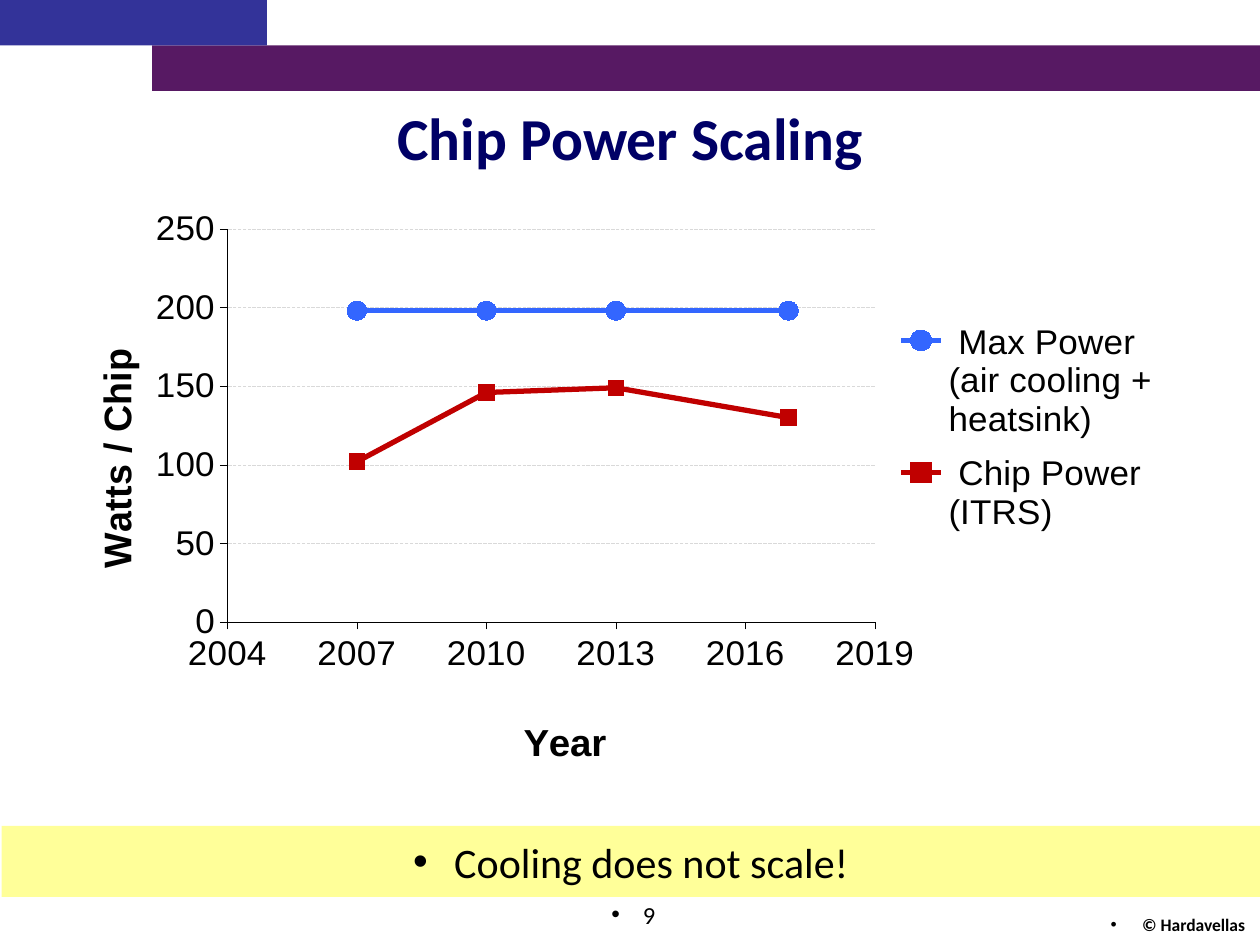
from lxml.etree import SubElement
from pptx import Presentation
from pptx.chart.data import XyChartData
from pptx.dml.color import RGBColor
from pptx.enum.chart import XL_CHART_TYPE as ChartType
from pptx.enum.chart import XL_LEGEND_POSITION as LegendPosition
from pptx.enum.chart import XL_MARKER_STYLE as Marker
from pptx.enum.chart import XL_TICK_MARK as TickMark
from pptx.enum.dml import MSO_LINE as Dash
from pptx.enum.shapes import MSO_SHAPE as Shape
from pptx.enum.text import MSO_ANCHOR as Anchor
from pptx.enum.text import PP_ALIGN as Align
from pptx.oxml.ns import qn
from pptx.util import Pt

TITLE = "Chip Power Scaling"
TAKEAWAY = " Cooling does not scale!"
BARS = [((87, 26, 633, 26), "571963"), ((0, 0, 152.5, 26), "333399")]
# text, box, size, bold
FOOTERS = [
    ("© Hardavellas", (480, 519, 238.5, 18), 10, True),
    ("9", (214, 510.5, 167.5, 37.5), 14, False),
]
YEARS = [2007, 2010, 2013, 2017]
# name, watts, colour, marker, marker size
SERIES = [
    (" Max Power (air cooling + heatsink)", [198, 198, 198, 198], "3366FF", Marker.CIRCLE, 11),
    (" Chip Power (ITRS)", [102, 146, 149, 130], "C00000", Marker.SQUARE, 9),
]
# title, minimum, maximum, step, title position
YEAR_AXIS = ("Year", 2004, 2019, 3, (0.4, 0.91))
WATT_AXIS = ("Watts / Chip", 0, 250, 50, (0.02, 0.26))
PLOT_AREA = (0.145, 0.051, 0.571, 0.7)
LEGEND_AREA = (0.73, 0.19, 0.24, 0.43)


def color(value):
    return RGBColor.from_string(value)


def points(box):
    return [Pt(length) for length in box]


def style(font, size, bold=False, name="Calibri", fill="000000"):
    font.name, font.size, font.bold = name, Pt(size), bold
    font.color.rgb = color(fill)


def add_bar(slide, box, fill):
    bar = slide.shapes.add_shape(Shape.RECTANGLE, *points(box))
    bar.shadow.inherit = False
    bar.fill.solid()
    bar.fill.fore_color.rgb = color(fill)
    bar.line.fill.background()
    return bar


def write_bullet(frame, text, align, size, bold=False):
    frame.word_wrap = True
    para = frame.paragraphs[0]
    para.text = text
    para.alignment = align
    properties = para._p.get_or_add_pPr()
    properties.set("marL", str(Pt(18)))
    properties.set("indent", str(-Pt(18)))
    SubElement(properties, qn("a:buFont"), typeface="Arial")
    SubElement(properties, qn("a:buChar"), char="•")
    style(para.runs[0].font, size, bold)


def place(element, area, inner=False):
    """Give a chart part a manual layout in fractions of the chart."""
    layout = element.find(qn("c:layout"))
    if layout is None:
        layout = element.makeelement(qn("c:layout"))
        overlay = element.find(qn("c:overlay"))
        if overlay is None:
            element.insert(0, layout)
        else:
            overlay.addprevious(layout)
    manual = SubElement(layout, qn("c:manualLayout"))
    if inner:
        SubElement(manual, qn("c:layoutTarget"), val="inner")
    for key in ("xMode", "yMode"):
        SubElement(manual, qn("c:" + key), val="edge")
    for key, value in zip("xywh", area):
        SubElement(manual, qn("c:" + key), val=str(value))


def format_axis(axis, title, low, high, step, position):
    axis.minimum_scale, axis.maximum_scale, axis.major_unit = low, high, step
    axis.major_tick_mark, axis.minor_tick_mark = TickMark.OUTSIDE, TickMark.NONE
    axis.has_major_gridlines = False
    axis.format.line.color.rgb = color("000000")
    axis.format.line.width = Pt(0.25)
    style(axis.tick_labels.font, 20, name="Arial")
    axis.tick_labels.number_format = "General"
    axis.tick_labels.number_format_is_linked = False
    frame = axis.axis_title.text_frame
    frame.text = title
    style(frame.paragraphs[0].runs[0].font, 22, True, "Arial")
    place(axis.axis_title._element, position)


def add_power_chart(slide):
    data = XyChartData()
    for name, watts, *_ in SERIES:
        series = data.add_series(name)
        for year, watt in zip(YEARS, watts):
            series.add_data_point(year, watt)
    box = points((36, 114.5, 648, 328.5))
    chart = slide.shapes.add_chart(ChartType.XY_SCATTER_SMOOTH, *box, data).chart
    chart.has_title = False
    style(chart.font, 22, name="Arial")
    format_axis(chart.category_axis, *YEAR_AXIS)
    format_axis(chart.value_axis, *WATT_AXIS)
    grid = chart.value_axis.major_gridlines.format.line
    grid.color.rgb = color("D9D9D9")
    grid.width = Pt(0.25)
    grid.dash_style = Dash.LONG_DASH

    chart.plots[0].vary_by_categories = False
    for series, (_, _, fill, marker, size) in zip(chart.plots[0].series, SERIES):
        series.smooth = True
        series.format.line.color.rgb = color(fill)
        series.format.line.width = Pt(3)
        series.marker.style, series.marker.size = marker, size
        series.marker.format.fill.solid()
        series.marker.format.fill.fore_color.rgb = color(fill)
        series.marker.format.line.color.rgb = color(fill)

    chart.has_legend = True
    chart.legend.position = LegendPosition.RIGHT
    chart.legend.include_in_layout = False
    style(chart.legend.font, 20, name="Arial")
    place(chart.legend._element, LEGEND_AREA)
    place(chart._chartSpace.chart.plotArea, PLOT_AREA, inner=True)


def main():
    deck = Presentation()
    deck.slide_width, deck.slide_height = Pt(720), Pt(540)
    slide = deck.slides.add_slide(deck.slide_layouts[5])
    for box, fill in BARS:
        add_bar(slide, box, fill)

    title = slide.shapes.title
    title.left, title.top, title.width, title.height = points((0, 52, 720, 52))
    title.text_frame.text = TITLE
    title.text_frame.vertical_anchor = Anchor.MIDDLE
    para = title.text_frame.paragraphs[0]
    para.alignment = Align.CENTER
    style(para.runs[0].font, 34, True, fill="000066")

    for text, box, size, bold in FOOTERS:
        footer = slide.shapes.add_textbox(*points(box))
        write_bullet(footer.text_frame, text, Align.RIGHT, size, bold)

    band = add_bar(slide, (1, 472, 719, 40.5), "FFFF99")
    band.text_frame.vertical_anchor = Anchor.MIDDLE
    write_bullet(band.text_frame, TAKEAWAY, Align.CENTER, 24)
    add_power_chart(slide)
    deck.save("out.pptx")


if __name__ == "__main__":
    main()
